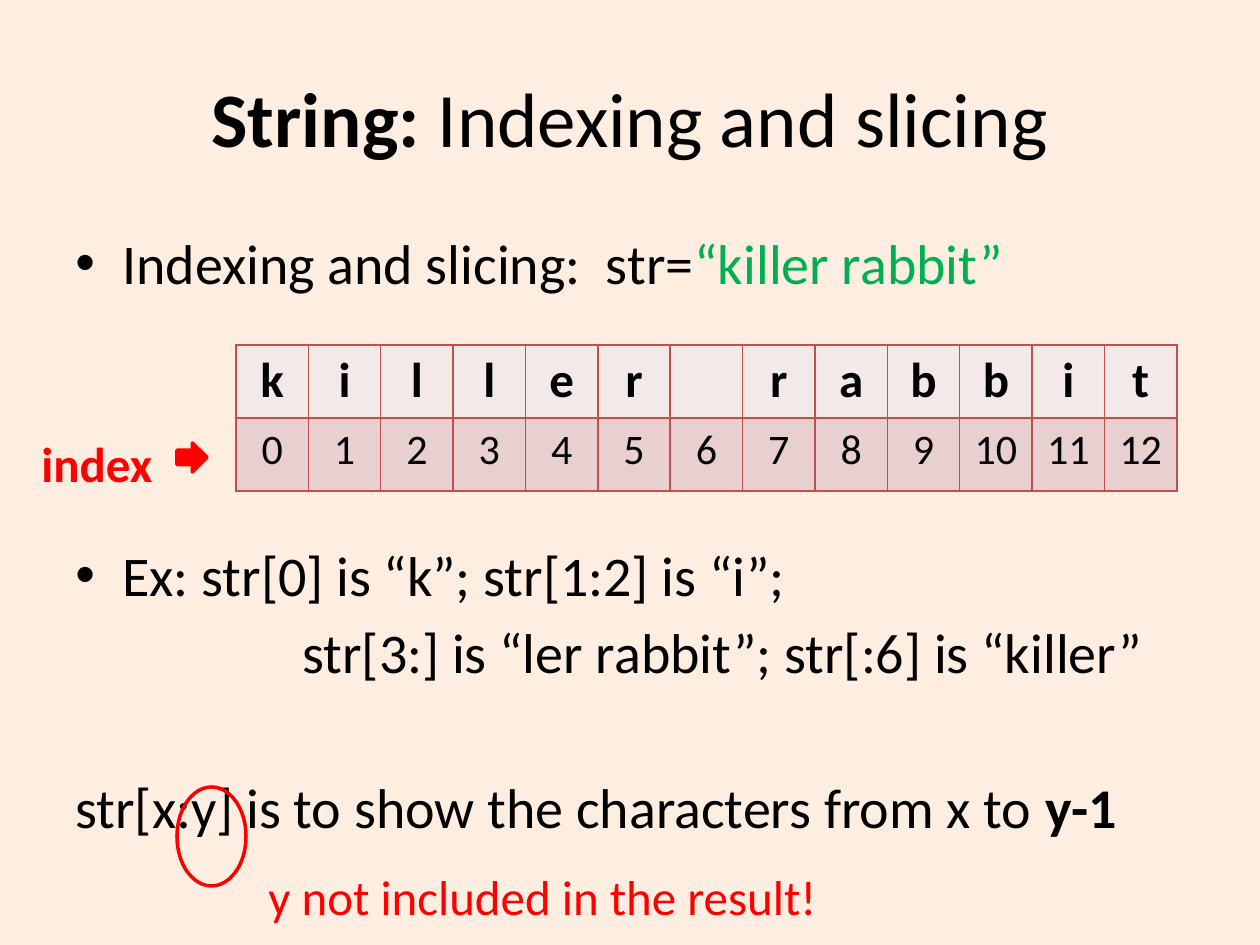
from dataclasses import dataclass

from lxml.etree import SubElement
from pptx import Presentation
from pptx.dml.color import RGBColor
from pptx.enum.shapes import MSO_SHAPE as Shape
from pptx.enum.text import MSO_ANCHOR as Anchor, PP_ALIGN as Align
from pptx.oxml.ns import qn
from pptx.util import Emu, Pt

PX = 914400 / 126
FONT = "Calibri"
COLORS = {
    "background": "FEEEE1",
    "text": "000000",
    "string": "00B050",
    "accent": "FF0000",
    "border": "C0504D",
    "letter_row": "F4E9E9",
    "index_row": "E8D0D0",
}
WORD = "killer rabbit"


@dataclass(frozen=True)
class Box:
    left: int
    top: int
    width: int
    height: int

    def emu(self) -> tuple:
        return tuple(px(v) for v in (self.left, self.top, self.width, self.height))


@dataclass(frozen=True)
class Line:
    """One paragraph: (text, format) runs, indents in px, spacing in points."""
    runs: tuple
    margin: int = 0
    before: float = 5.7
    bullet: bool = False


@dataclass(frozen=True)
class Mark:
    kind: Shape
    box: Box
    filled: bool


TITLE = (("String: ", {"bold": True}), ("Indexing and slicing", {}))
TITLE_BOX = Box(63, 38, 1134, 157)
BODY_BOX = Box(63, 222, 1134, 720)
TABLE_BOX = Box(236, 345, 941, 146)
BODY = (
    Line((("Indexing and slicing:  str=", {}),
          ("“killer rabbit”", {"color": "string"})), 47, 0, True),
    Line((("Ex: str[0] is “k”; str[1:2] is “i”;", {}),), 47, 140, True),
    Line((("str[3:] is “ler rabbit”; str[:6] is “killer”", {}),), 227),
    Line((("str[x:y] is to show the characters from x to ", {}),
          ("y-1", {"bold": True})), 0, 50.4),
)
NOTES = (
    (Box(29, 427, 168, 88), "index", True),
    (Box(256, 860, 679, 84), "y not included in the result!", False),
)
MARKS = (
    Mark(Shape.RIGHT_ARROW, Box(177, 443, 30, 29), True),
    Mark(Shape.OVAL, Box(177, 787, 69, 99), False),
)


def px(value: float) -> Emu:
    return Emu(round(value * PX))


def rgb(name: str) -> RGBColor:
    return RGBColor.from_string(COLORS[name])


def add_text(paragraph, text: str, *, size: int, bold: bool = False,
             color: str = "text") -> None:
    run = paragraph.add_run()
    run.text = text
    run.font.name = FONT
    run.font.size = Pt(size)
    run.font.bold = bold
    run.font.color.rgb = rgb(color)


def add_text_box(slide, box: Box):
    frame = slide.shapes.add_textbox(*box.emu()).text_frame
    frame.word_wrap = True
    return frame


def set_indent(paragraph, line: Line) -> None:
    properties = paragraph._p.get_or_add_pPr()
    properties.set("marL", str(px(line.margin)))
    if line.bullet:
        properties.set("indent", str(-px(line.margin)))
        SubElement(properties, qn("a:buFont"), typeface="Arial")
        SubElement(properties, qn("a:buChar"), char="•")


def add_title(slide) -> None:
    title = slide.shapes.title
    title.left, title.top, title.width, title.height = TITLE_BOX.emu()
    title.text_frame.vertical_anchor = Anchor.MIDDLE
    paragraph = title.text_frame.paragraphs[0]
    paragraph.alignment = Align.CENTER
    for text, style in TITLE:
        add_text(paragraph, text, size=44, **style)


def add_body(slide) -> None:
    frame = add_text_box(slide, BODY_BOX)
    for number, line in enumerate(BODY):
        paragraph = frame.add_paragraph() if number else frame.paragraphs[0]
        paragraph.space_before = Pt(line.before)
        set_indent(paragraph, line)
        for text, style in line.runs:
            add_text(paragraph, text, size=32, **style)


def set_borders(cell) -> None:
    properties = cell._tc.get_or_add_tcPr()
    for position, side in enumerate(("lnL", "lnR", "lnT", "lnB")):
        border = SubElement(properties, qn(f"a:{side}"), w=str(Pt(1)))
        fill = SubElement(border, qn("a:solidFill"))
        SubElement(fill, qn("a:srgbClr"), val=COLORS["border"])
        properties.insert(position, border)


def add_index_table(slide) -> None:
    rows = (
        (WORD, "letter_row", {"size": 28, "bold": True}),
        (range(len(WORD)), "index_row", {"size": 24}),
    )
    table = slide.shapes.add_table(len(rows), len(WORD), *TABLE_BOX.emu()).table
    for column in table.columns:
        column.width = px(TABLE_BOX.width / len(WORD))
    for row, (values, fill, style) in enumerate(rows):
        table.rows[row].height = px(TABLE_BOX.height / len(rows))
        for column, value in enumerate(values):
            cell = table.cell(row, column)
            cell.fill.solid()
            cell.fill.fore_color.rgb = rgb(fill)
            set_borders(cell)
            text = str(value).strip()
            if text:
                paragraph = cell.text_frame.paragraphs[0]
                paragraph.alignment = Align.CENTER
                add_text(paragraph, text, **style)


def add_mark(slide, mark: Mark) -> None:
    shape = slide.shapes.add_shape(mark.kind, *mark.box.emu())
    shape.shadow.inherit = False
    shape.line.color.rgb = rgb("accent")
    shape.line.width = Pt(2)
    if mark.filled:
        shape.fill.solid()
        shape.fill.fore_color.rgb = rgb("accent")
    else:
        shape.fill.background()


def main() -> None:
    presentation = Presentation()
    presentation.slide_width, presentation.slide_height = px(1260), px(945)
    slide = presentation.slides.add_slide(presentation.slide_layouts[5])
    slide.background.fill.solid()
    slide.background.fill.fore_color.rgb = rgb("background")
    add_title(slide)
    add_body(slide)
    add_index_table(slide)
    for box, text, bold in NOTES:
        paragraph = add_text_box(slide, box).paragraphs[0]
        add_text(paragraph, text, size=28, bold=bold, color="accent")
    for mark in MARKS:
        add_mark(slide, mark)
    presentation.save("out.pptx")


if __name__ == "__main__":
    main()
